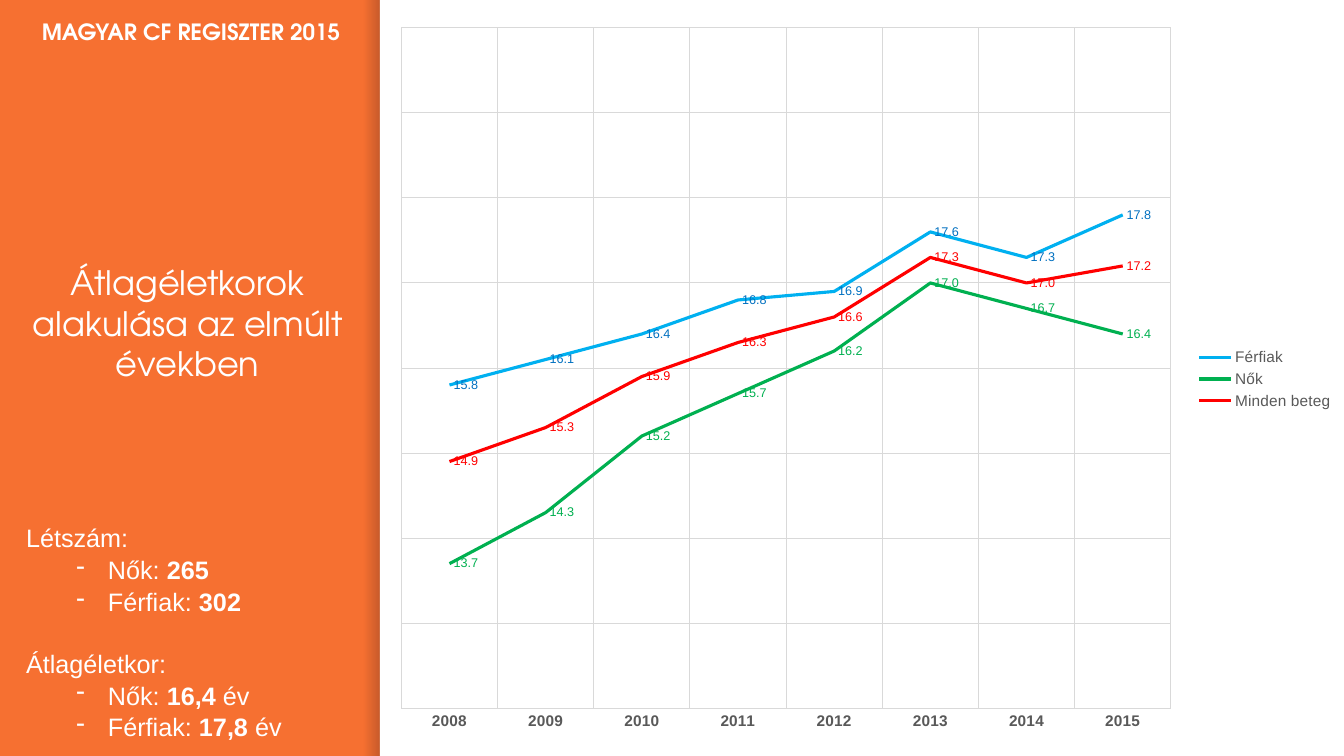
import pptx
import pptx.chart.data
import pptx.dml.color
import pptx.enum.chart
import pptx.enum.shapes
import pptx.enum.text
import pptx.oxml
import pptx.oxml.ns
import pptx.util
from lxml import etree

Pt = pptx.util.Pt
qn = pptx.oxml.ns.qn

COLOURS = {
    "orange": "F67031", "white": "FFFFFF", "shade": "000014",
    "grid": "D9D9D9", "grey": "595959", "black": "000000",
    "men": "00B0F0", "men_label": "0070C0", "women": "00B050", "all": "FF0000",
}
HEADING_FONT = "TeX Gyre Adventor"
BODY_FONT = "Arial"
WIDTH, HEIGHT = 960, 540
PANEL_LEFT = 271.4

YEARS = [str(year) for year in range(2008, 2016)]
# Name, line colour, label colour, mean age by year
SERIES = [
    ("Férfiak", "men", "men_label", (15.8, 16.1, 16.4, 16.8, 16.9, 17.6, 17.3, 17.8)),
    ("Nők", "women", "women", (13.7, 14.3, 15.2, 15.7, 16.2, 17.0, 16.7, 16.4)),
    ("Minden beteg", "all", "all", (14.9, 15.3, 15.9, 16.3, 16.6, 17.3, 17.0, 17.2)),
]
# Heading, then its items as (text, bold) runs
STATISTICS = [
    ("Létszám:", [
        [("Nők: ", False), ("265", True)],
        [("Férfiak: ", False), ("302", True)],
    ]),
    ("Átlagéletkor:", [
        [("Nők: ", False), ("16,4", True), (" év", False)],
        [("Férfiak: ", False), ("17,8 ", True), ("év", False)],
    ]),
]


def rgb(name):
    return pptx.dml.color.RGBColor.from_string(COLOURS[name])


def style_font(font, size, colour, face=BODY_FONT, bold=False):
    font.size = Pt(size)
    font.name = face
    font.bold = bold
    font.color.rgb = rgb(colour)


def style_line(line, colour, width):
    line.color.rgb = rgb(colour)
    line.width = Pt(width)


def add_run(paragraph, text, size, face=BODY_FONT, bold=False):
    run = paragraph.add_run()
    run.text = text
    style_font(run.font, size, "white", face, bold)


def add_text_frame(slide, left, top, width, height):
    frame = slide.shapes.add_textbox(Pt(left), Pt(top), Pt(width), Pt(height)).text_frame
    frame.word_wrap = True
    return frame


def add_panel(slide, left, width):
    panel = slide.shapes.add_shape(
        pptx.enum.shapes.MSO_SHAPE.RECTANGLE, Pt(left), 0, Pt(width), Pt(HEIGHT))
    panel.shadow.inherit = False
    panel.line.fill.background()
    return panel


def fade_in(panel, colour, opacity):
    panel.fill.gradient()
    panel.fill.gradient_angle = 0
    for stop, percent in zip(panel.fill.gradient_stops, (0, opacity)):
        stop.color.rgb = rgb(colour)
    for tint, percent in zip(panel.element.spPr.iter(qn("a:srgbClr")), (0, opacity)):
        etree.SubElement(tint, qn("a:alpha")).set("val", str(percent * 1000))


def set_title(slide, text):
    title = slide.shapes.title
    title.left, title.top, title.width, title.height = Pt(11.5), Pt(180), Pt(245), Pt(81.4)
    frame = title.text_frame
    frame.word_wrap = True
    frame.auto_size = pptx.enum.text.MSO_AUTO_SIZE.NONE
    frame.vertical_anchor = pptx.enum.text.MSO_ANCHOR.TOP
    frame.margin_left = frame.margin_right = Pt(7.2)
    frame.margin_top = frame.margin_bottom = Pt(7.2)
    paragraph = frame.paragraphs[0]
    paragraph.alignment = pptx.enum.text.PP_ALIGN.CENTER
    add_run(paragraph, text, 24, HEADING_FONT)


def add_header(slide, text):
    paragraph = add_text_frame(slide, 0, 9.4, 273, 26.6).paragraphs[0]
    paragraph.alignment = pptx.enum.text.PP_ALIGN.CENTER
    add_run(paragraph, text, 16, HEADING_FONT, True)


def set_dash_bullet(paragraph):
    properties = paragraph._p.get_or_add_pPr()
    properties.set("marL", str(Pt(58.5)))
    properties.set("indent", str(-Pt(22.5)))
    etree.SubElement(properties, qn("a:buChar")).set("char", "-")


def add_statistics(slide):
    frame = add_text_frame(slide, 11.5, 368.6, 245, 160)
    for index, (heading, items) in enumerate(STATISTICS):
        paragraph = frame.add_paragraph() if index else frame.paragraphs[0]
        paragraph.line_spacing = 1.05
        if index:
            paragraph.space_before = Pt(21.7)
        add_run(paragraph, heading, 18)
        for runs in items:
            item = frame.add_paragraph()
            item.level = 1
            item.line_spacing = 1.05
            set_dash_bullet(item)
            for text, bold in runs:
                add_run(item, text, 18, bold=bold)


def set_plot_layout(chart, x, y, w, h):
    plot_area = chart._chartSpace.chart.plotArea
    for old in plot_area.findall(qn("c:layout")):
        plot_area.remove(old)
    layout = etree.Element(qn("c:layout"))
    manual = etree.SubElement(layout, qn("c:manualLayout"))
    settings = [("layoutTarget", "inner"), ("xMode", "edge"), ("yMode", "edge"),
                ("x", x), ("y", y), ("w", w), ("h", h)]
    for tag, value in settings:
        etree.SubElement(manual, qn("c:" + tag)).set("val", str(value))
    plot_area.insert(0, layout)


def add_age_chart(slide):
    data = pptx.chart.data.CategoryChartData(number_format="#,##0.0")
    data.categories = YEARS
    for name, _, _, ages in SERIES:
        data.add_series(name, ages)
    chart = slide.shapes.add_chart(
        pptx.enum.chart.XL_CHART_TYPE.LINE, Pt(273), Pt(9.4), Pt(687), Pt(522.7), data).chart
    chart.has_title = False
    style_font(chart.font, 10, "black")
    set_plot_layout(chart, 0.02, 0.02, 0.8, 0.93)

    # Axes and grid
    years, ages = chart.category_axis, chart.value_axis
    for axis in (years, ages):
        axis.has_major_gridlines = True
        style_line(axis.major_gridlines.format.line, "grid", 0.75)
        axis.major_tick_mark = pptx.enum.chart.XL_TICK_MARK.NONE
    style_line(years.format.line, "grid", 0.75)
    style_font(years.tick_labels.font, 11, "grey", bold=True)
    ages.minimum_scale, ages.maximum_scale, ages.major_unit = 12, 20, 1
    ages.visible = False

    # Legend
    chart.has_legend = True
    chart.legend.position = pptx.enum.chart.XL_LEGEND_POSITION.RIGHT
    chart.legend.include_in_layout = False
    style_font(chart.legend.font, 11, "grey")

    # Lines and value labels
    chart.plots[0].vary_by_categories = False
    for series, (_, colour, label_colour, _) in zip(chart.plots[0].series, SERIES):
        series.smooth = False
        series.marker.style = pptx.enum.chart.XL_MARKER_STYLE.NONE
        style_line(series.format.line, colour, 2.25)
        labels = series.data_labels
        labels.show_value = True
        labels.number_format = "#,##0.0"
        labels.number_format_is_linked = False
        labels.position = pptx.enum.chart.XL_LABEL_POSITION.RIGHT
        style_font(labels.font, 9, label_colour)


def main():
    deck = pptx.Presentation()
    deck.slide_width, deck.slide_height = Pt(WIDTH), Pt(HEIGHT)
    slide = deck.slides.add_slide(deck.slide_layouts[5])

    # Orange background, shaded edge and white chart panel
    slide.background.fill.solid()
    slide.background.fill.fore_color.rgb = rgb("orange")
    fade_in(add_panel(slide, PANEL_LEFT - 11.5, 11.5), "shade", 20)
    chart_panel = add_panel(slide, PANEL_LEFT, WIDTH - PANEL_LEFT)
    chart_panel.fill.solid()
    chart_panel.fill.fore_color.rgb = rgb("white")

    # Side text and chart
    set_title(slide, "Átlagéletkorok alakulása az elmúlt években")
    add_header(slide, "MAGYAR CF REGISZTER 2015")
    add_age_chart(slide)
    add_statistics(slide)

    deck.save("out.pptx")


if __name__ == "__main__":
    main()
